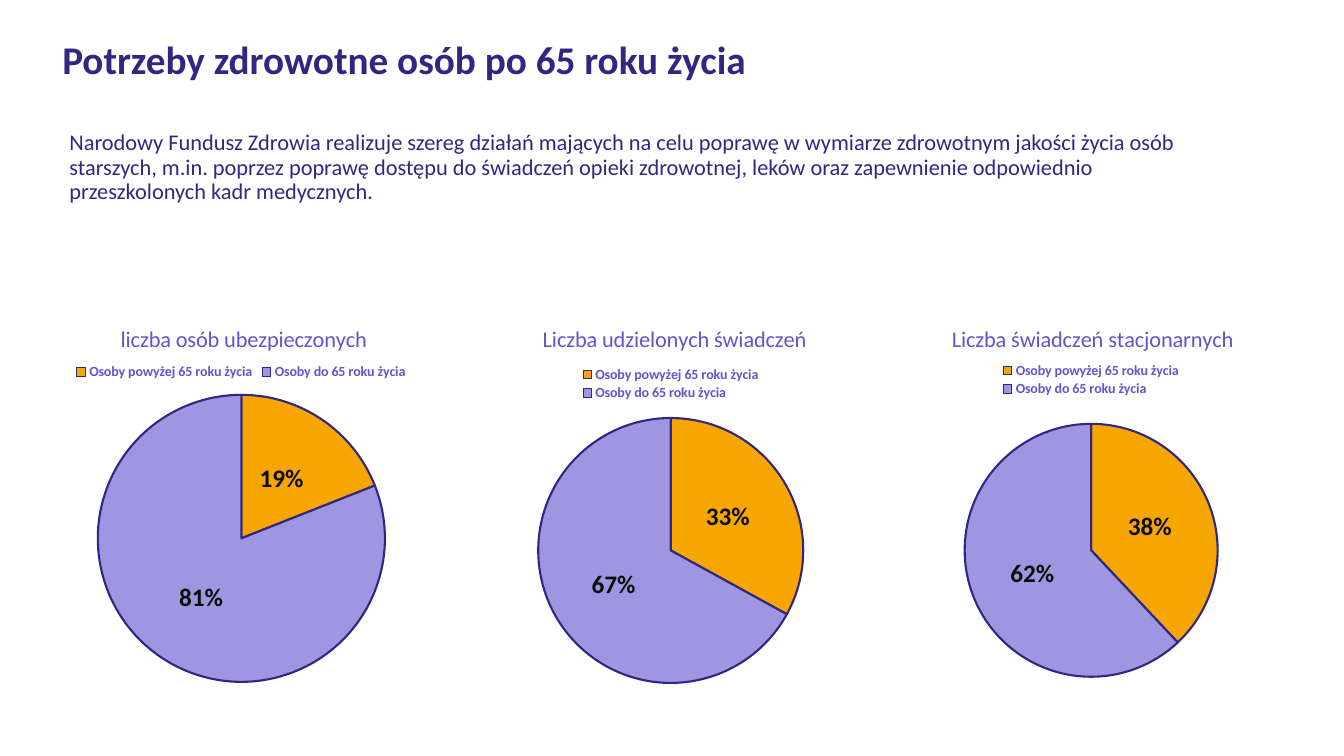
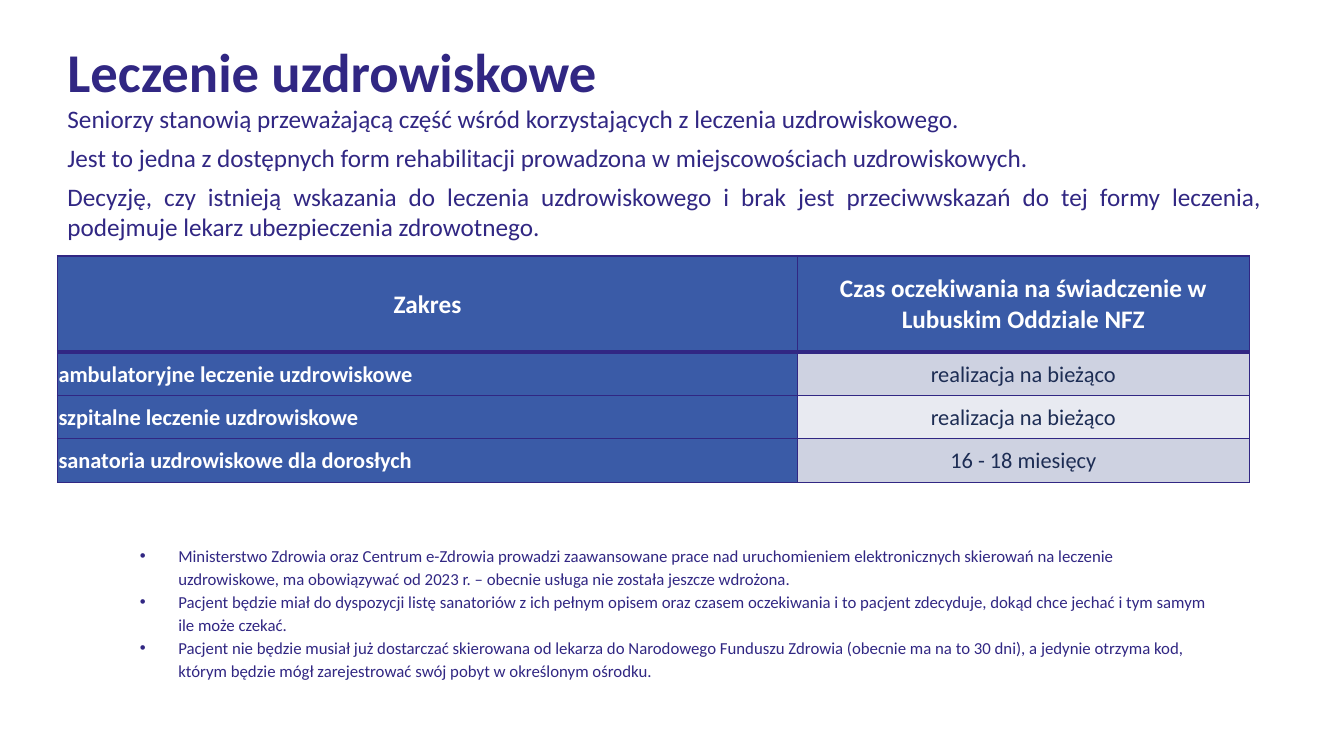
from lxml.etree import SubElement
from pptx import Presentation
from pptx.chart.data import CategoryChartData
from pptx.dml.color import RGBColor
from pptx.enum.chart import XL_CHART_TYPE as ChartType
from pptx.enum.chart import XL_LABEL_POSITION as LabelPosition
from pptx.enum.chart import XL_LEGEND_POSITION as LegendPosition
from pptx.enum.text import MSO_ANCHOR as Anchor
from pptx.enum.text import PP_ALIGN as Align
from pptx.oxml import parse_xml
from pptx.oxml.ns import nsdecls, qn
from pptx.util import Inches, Pt

# Shared style
FONT = "Calibri"
NAVY = RGBColor(0x31, 0x27, 0x83)
VIOLET = RGBColor(0x62, 0x55, 0xCC)
LILAC = RGBColor(0x9E, 0x96, 0xE0)
ORANGE = RGBColor(0xF7, 0xA6, 0x00)
BLUE = RGBColor(0x3A, 0x5B, 0xA7)
INK = RGBColor(0x1D, 0x2D, 0x54)
BLACK = RGBColor(0x0D, 0x0D, 0x0D)
WHITE = RGBColor(0xFF, 0xFF, 0xFF)
BANDS = (RGBColor(0xCE, 0xD2, 0xE1), RGBColor(0xE8, 0xEA, 0xF1))
INDENT = Inches(0.38)


def set_font(font, size, color, bold=False):
    font.name, font.size, font.bold = FONT, Pt(size), bold
    font.color.rgb = color


def write_text(frame, *texts, size=16, color=NAVY, bold=False, align=Align.LEFT,
               spacing=None, gap=0, bullet=None):
    """Fill a text frame with one paragraph per text."""
    for index, text in enumerate(texts):
        paragraph = frame.paragraphs[0] if index == 0 else frame.add_paragraph()
        paragraph.alignment = align
        if spacing:
            paragraph.line_spacing = spacing
        if index and gap:
            paragraph.space_before = Pt(gap)
        if bullet:
            properties = paragraph._p.get_or_add_pPr()
            properties.set("marL", str(INDENT))
            properties.set("indent", str(-INDENT))
            SubElement(properties, qn("a:buFont"), typeface="Arial")
            SubElement(properties, qn("a:buChar"), char=bullet)
        run = paragraph.add_run()
        run.text = text
        set_font(run.font, size, color, bold)


def place(element, index, target=None, **shares):
    """Set the place of a chart part, as shares of the chart's size."""
    for old in element.findall(qn("c:layout")):
        element.remove(old)
    values = {"layoutTarget": target} if target else {}
    values |= {"xMode": "edge", "yMode": "edge"} | shares
    layout = parse_xml(f"<c:layout {nsdecls('c')}/>")
    manual = SubElement(layout, qn("c:manualLayout"))
    for name, value in values.items():
        text = value if isinstance(value, str) else f"{value:.3f}"
        SubElement(manual, qn(f"c:{name}"), val=text)
    element.insert(index, layout)


def set_borders(cell, **widths):
    """Draw the cell's sides (L, R, T, B) with widths in points."""
    properties = cell._tc.get_or_add_tcPr()
    for index, (side, width) in enumerate(widths.items()):
        line = parse_xml(
            f'<a:ln{side} {nsdecls("a")} w="{Pt(width)}"><a:solidFill>'
            f'<a:srgbClr val="{NAVY}"/></a:solidFill></a:ln{side}>')
        properties.insert(index, line)


class Deck:
    """Holds the presentation and the current slide; lengths are percent of the slide."""

    def __init__(self):
        self.presentation = Presentation()
        self.presentation.slide_width = Inches(13.33)
        self.presentation.slide_height = Inches(7.5)
        self.slide = None

    def new_slide(self):
        self.slide = self.presentation.slides.add_slide(
            self.presentation.slide_layouts[6])

    def across(self, share):
        return round(self.presentation.slide_width * share / 100)

    def down(self, share):
        return round(self.presentation.slide_height * share / 100)

    def area(self, left, top, width, height):
        return (self.across(left), self.down(top),
                self.across(width), self.down(height))

    def text(self, area, *texts, anchor=Anchor.TOP, **style):
        frame = self.slide.shapes.add_textbox(*self.area(*area)).text_frame
        frame.word_wrap = True
        frame.vertical_anchor = anchor
        write_text(frame, *texts, **style)

    def pie(self, area, title, title_at, values, legend_box, diameter, center):
        """Pie with a title, a legend on top and percent labels."""
        data = CategoryChartData(number_format="0%")
        data.categories = ["Osoby powyżej 65 roku życia", "Osoby do 65 roku życia"]
        data.add_series("Series 1", values)
        shape = self.slide.shapes.add_chart(ChartType.PIE, *self.area(*area), data)
        chart = shape.chart
        set_font(chart.font, 10, NAVY)

        chart.has_title = True
        write_text(chart.chart_title.text_frame, title, color=VIOLET,
                   align=Align.CENTER)
        chart.chart_title.include_in_layout = False
        place(chart.chart_title._element, 1, x=title_at[0], y=title_at[1])

        chart.has_legend = True
        chart.legend.position = LegendPosition.TOP
        chart.legend.include_in_layout = False
        set_font(chart.legend.font, 10, VIOLET, bold=True)
        place(chart.legend._element, 1, **dict(zip("xywh", legend_box)))

        width = Inches(diameter) / shape.width
        height = Inches(diameter) / shape.height
        place(chart._chartSpace.chart.plotArea, 0, "inner", x=0.5 - width / 2,
              y=center - height / 2, w=width, h=height)

        plot = chart.plots[0]
        plot.vary_by_categories = True
        for index, color in enumerate((ORANGE, LILAC)):
            point = plot.series[0].points[index]
            point.format.fill.solid()
            point.format.fill.fore_color.rgb = color
            point.format.line.color.rgb = NAVY
            point.format.line.width = Pt(1.5)
        plot.has_data_labels = True
        labels = plot.data_labels
        labels.show_value, labels.show_percentage = True, False
        labels.number_format, labels.number_format_is_linked = "0%", False
        labels.position = LabelPosition.CENTER
        set_font(labels.font, 18, BLACK, bold=True)

    def table(self, left, top, widths, heights, rows):
        """Table with a blue header row and a blue first column."""
        area = self.area(left, top, sum(widths), sum(heights))
        table = self.slide.shapes.add_table(
            len(rows), len(widths), *area).table
        table.horz_banding = False
        for column, width in zip(table.columns, widths):
            column.width = self.across(width)
        for row, height in zip(table.rows, heights):
            row.height = self.down(height)
        for row_index, row in enumerate(rows):
            for column_index, text in enumerate(row):
                cell = table.cell(row_index, column_index)
                header = row_index == 0
                heading = header or column_index == 0
                cell.margin_left = cell.margin_right = cell.margin_top = Inches(0.01)
                cell.margin_bottom = 0
                cell.vertical_anchor = Anchor.MIDDLE
                cell.fill.solid()
                cell.fill.fore_color.rgb = (
                    BLUE if heading else BANDS[(row_index - 1) % 2])
                set_borders(cell, L=1, R=1, T=3 if row_index == 1 else 1,
                            B=3 if header else 1)
                write_text(cell.text_frame, text, size=18 if header else 16,
                           color=WHITE if heading else INK, bold=heading,
                           align=Align.LEFT if heading and not header
                           else Align.CENTER)


def build_health_needs(deck):
    deck.new_slide()
    deck.text(
        (4.43, 12.53, 86.27, 19.33),
        "Narodowy Fundusz Zdrowia realizuje szereg działań mających na celu poprawę "
        "w wymiarze zdrowotnym jakości życia osób starszych, m.in. poprzez poprawę "
        "dostępu do świadczeń opieki zdrowotnej, leków oraz zapewnienie odpowiednio "
        "przeszkolonych kadr medycznych.",
        anchor=Anchor.MIDDLE, spacing=0.9)
    # Left, title, its place, values, legend box, diameter in inches, center height
    pies = (
        (3.9, "liczba osób ubezpieczonych", (0.17, 0.05), (0.19, 0.81),
         (0.05, 0.15, 0.9, 0.06), 2.85, 0.6),
        (35.86, "Liczba udzielonych świadczeń", (0.15, 0.05), (0.33, 0.67),
         (0.25, 0.16, 0.5, 0.1), 2.63, 0.63),
        (67.14, "Liczba świadczeń stacjonarnych", (0.12, 0.05), (0.38, 0.62),
         (0.25, 0.15, 0.5, 0.1), 2.51, 0.63),
    )
    for left, *details in pies:
        deck.pie((left, 39.73, 28.1, 52.53), *details)
    deck.text((3.9, 4, 57.84, 7.6), "Potrzeby zdrowotne osób po 65 roku życia",
              size=28, bold=True)


def build_spa_treatment(deck):
    deck.new_slide()
    deck.text((4.28, 3.07, 86.27, 13.73), "Leczenie uzdrowiskowe", size=39,
              bold=True, anchor=Anchor.MIDDLE, spacing=0.9)
    deck.text(
        (4.28, 13.07, 90.32, 19.73),
        "Seniorzy stanowią przeważającą część wśród korzystających z leczenia "
        "uzdrowiskowego.",
        "Jest to jedna z dostępnych form rehabilitacji prowadzona w miejscowościach "
        "uzdrowiskowych.",
        "Decyzję, czy istnieją wskazania do leczenia uzdrowiskowego i brak jest "
        "przeciwwskazań do tej formy leczenia, podejmuje lekarz ubezpieczenia "
        "zdrowotnego.",
        size=18, align=Align.JUSTIFY, gap=6)
    deck.table(4.28, 33.87, (55.06, 33.61), (12.73, 5.73, 5.73, 5.73), (
        ("Zakres", "Czas oczekiwania na świadczenie w Lubuskim Oddziale NFZ"),
        ("ambulatoryjne leczenie uzdrowiskowe", "realizacja na bieżąco"),
        ("szpitalne leczenie uzdrowiskowe", "realizacja na bieżąco"),
        ("sanatoria uzdrowiskowe dla dorosłych", "16 - 18 miesięcy"),
    ))
    deck.text(
        (9.68, 71.07, 81.77, 19.73),
        "Ministerstwo Zdrowia oraz Centrum e-Zdrowia prowadzi zaawansowane prace nad "
        "uruchomieniem elektronicznych skierowań na leczenie uzdrowiskowe, ma "
        "obowiązywać od 2023 r. – obecnie usługa nie została jeszcze wdrożona.",
        "Pacjent będzie miał do dyspozycji listę sanatoriów z ich pełnym opisem oraz "
        "czasem oczekiwania i to pacjent zdecyduje, dokąd chce jechać i tym samym "
        "ile może czekać.",
        "Pacjent nie będzie musiał już dostarczać skierowana od lekarza do Narodowego "
        "Funduszu Zdrowia (obecnie ma na to 30 dni), a jedynie otrzyma kod, którym "
        "będzie mógł zarejestrować swój pobyt w określonym ośrodku.",
        size=12, spacing=1.15, bullet="•")


def main():
    deck = Deck()
    build_health_needs(deck)
    build_spa_treatment(deck)
    deck.presentation.save("out.pptx")


if __name__ == "__main__":
    main()
